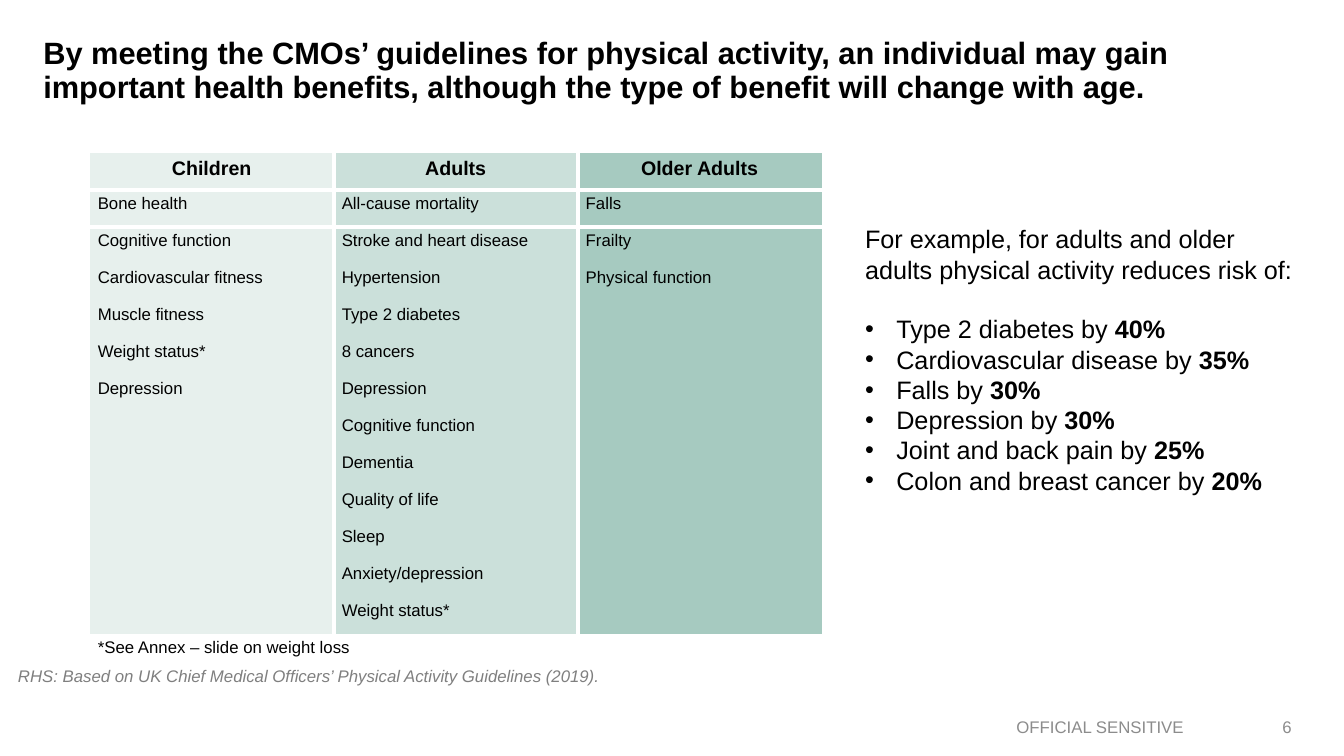
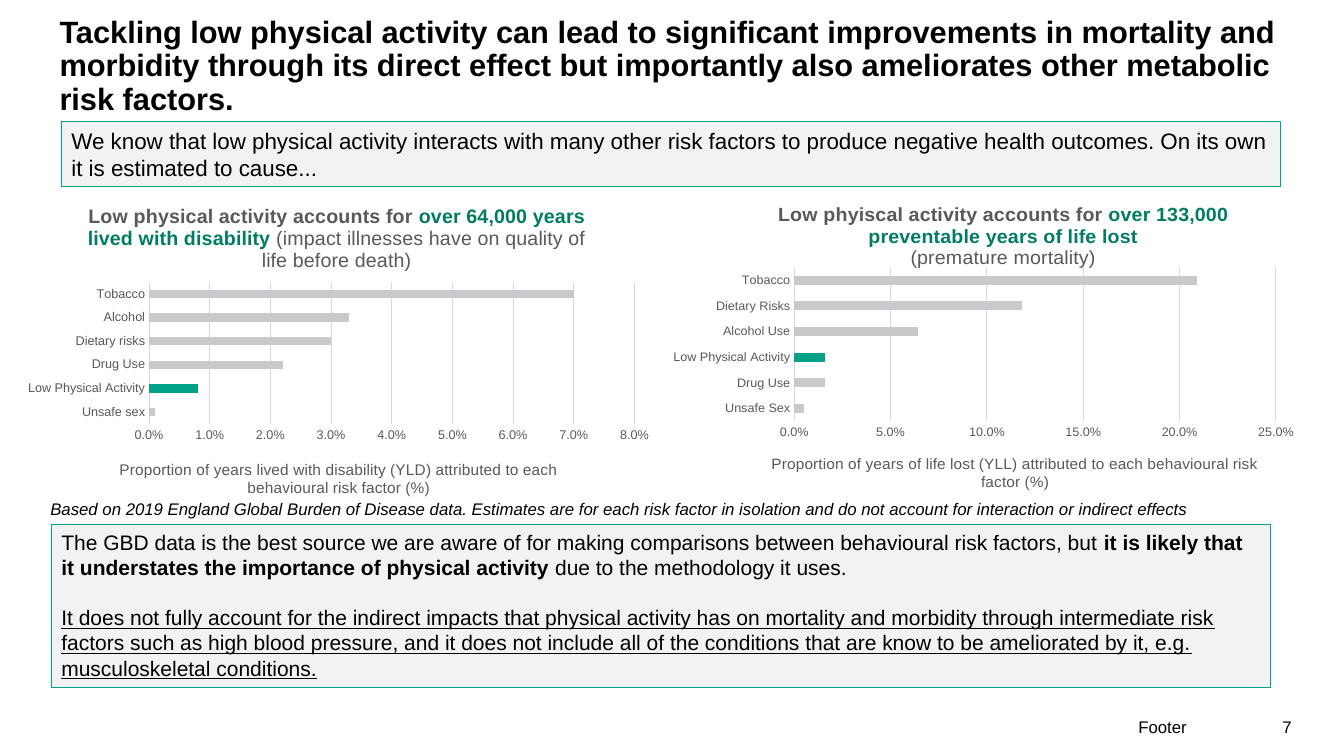
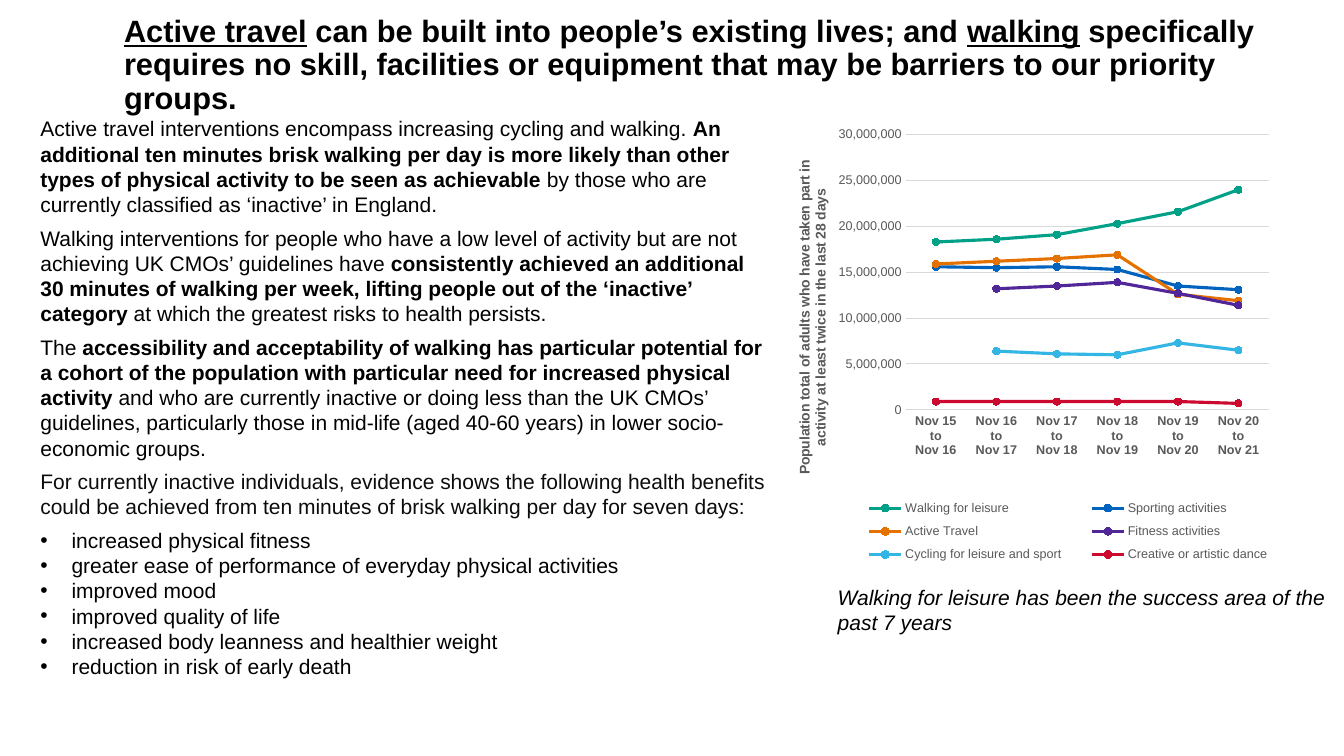
from lxml.etree import SubElement
from pptx import Presentation
from pptx.chart.data import CategoryChartData
from pptx.dml.color import RGBColor
from pptx.enum.chart import XL_CHART_TYPE, XL_LEGEND_POSITION, XL_MARKER_STYLE, XL_TICK_MARK
from pptx.enum.shapes import MSO_SHAPE
from pptx.enum.text import MSO_ANCHOR, MSO_AUTO_SIZE, PP_ALIGN
from pptx.oxml import parse_xml
from pptx.oxml.ns import nsdecls, qn
from pptx.util import Inches, Pt

HUES = {
    "ink": "000000", "soft": "0B0C0C", "white": "FFFFFF", "mute": "8C8C8C",
    "note": "7F7F7F", "label": "595959", "grid": "D9D9D9", "panel": "F2F2F2",
    "bar": "C9C9CB", "green": "01A188", "deep": "007C63", "blue": "0063BE",
    "orange": "E57200", "purple": "512698", "sky": "34B6E4", "red": "CC092F",
    "pale": "E7F0ED", "mint": "CBE0DA", "sage": "A6CAC0",
}
FONT = "Arial"
BOLD, LINE, PLAIN = {"bold": True}, {"underline": True}, {"bold": False}
DEEP = {"color": "deep"}

# Content

GAINS_HEAD = ("By meeting the CMOs’ guidelines for physical activity, an individual may gain "
              "important health benefits, although the type of benefit will change with age.")
GAINS = [
    ("Children", "pale", ["Bone health", "Cognitive function", "Cardiovascular fitness",
                          "Muscle fitness", "Weight status*", "Depression"]),
    ("Adults", "mint", ["All-cause mortality", "Stroke and heart disease", "Hypertension",
                        "Type 2 diabetes", "8 cancers", "Depression", "Cognitive function",
                        "Dementia", "Quality of life", "Sleep", "Anxiety/depression",
                        "Weight status*"]),
    ("Older Adults", "sage", ["Falls", "Frailty", "Physical function"]),
]
ANNEX = "*See Annex – slide on weight loss"
BASIS = "RHS: Based on UK Chief Medical Officers’ Physical Activity Guidelines (2019)."
RISK_LEAD = "For example, for adults and older adults physical activity reduces risk of:"
RISKS = [("Type 2 diabetes", 40), ("Cardiovascular disease", 35), ("Falls", 30),
         ("Depression", 30), ("Joint and back pain", 25), ("Colon and breast cancer", 20)]

BURDEN_HEAD = ("Tackling low physical activity can lead to significant improvements in mortality "
               "and morbidity through its direct effect but importantly also ameliorates other "
               "metabolic risk factors.")
BURDEN_LEAD = ("We know that low physical activity interacts with many other risk factors to "
               "produce negative health outcomes. On its own it is estimated to cause...")
BURDEN_NOTE = ("Based on 2019 England Global Burden of Disease data. Estimates are for each risk "
               "factor in isolation and do not account for interaction or indirect effects")
CAVEAT = [
    "The GBD data is the best source we are aware of for making comparisons between "
    "behavioural risk factors, but ",
    ("it is likely that it understates the importance of physical activity", BOLD),
    " due to the methodology it uses.",
]
LIMITS = ("It does not fully account for the indirect impacts that physical activity has on "
          "mortality and morbidity through intermediate risk factors such as high blood pressure, "
          "and it does not include all of the conditions that are know to be ameliorated by it, "
          "e.g. musculoskeletal conditions.")
FOCUS = "Low Physical Activity"
BURDENS = [
    {"at": (0.13, 1.87, 6.42, 3.2), "plot": (0.21, 0.29, 0.75, 0.44),
     "title": [["Low physical activity accounts for ",
                ("over 64,000 years lived with disability", DEEP),
                (" (impact illnesses have on quality of life before death)", PLAIN)]],
     "spot": None, "top": 0.08, "step": 0.01,
     "axis": "Proportion of years lived with disability (YLD) attributed to each "
             "behavioural risk factor (%)",
     "foot": (0.16, 0.83),
     "data": {"Unsafe sex": 0.001, FOCUS: 0.008, "Drug Use": 0.022,
              "Dietary risks": 0.03, "Alcohol": 0.033, "Tobacco": 0.07}},
    {"at": (6.54, 1.89, 6.37, 3.02), "plot": (0.21, 0.26, 0.75, 0.52),
     "title": [["Low phyiscal activity accounts for ",
                ("over 133,000 preventable years of life lost", DEEP)],
               [("(premature mortality)", PLAIN)]],
     "spot": (0.18, 0.03), "top": 0.25, "step": 0.05,
     "axis": "Proportion of years of life lost (YLL) attributed to each "
             "behavioural risk factor (%)",
     "foot": (0.17, 0.88),
     "data": {"Unsafe Sex": 0.005, "Drug Use": 0.016, FOCUS: 0.016,
              "Alcohol Use": 0.064, "Dietary Risks": 0.118, "Tobacco": 0.209}},
]

WALK_HEAD = [("Active travel", LINE), " can be built into people’s existing lives; and ",
             ("walking", LINE), " specifically requires no skill, facilities or equipment that "
             "may be barriers to our priority groups."]
WALK = [
    ["Active travel interventions encompass increasing cycling and walking. ",
     ("An additional ten minutes brisk walking per day is more likely than other types of "
      "physical activity to be seen as achievable", BOLD),
     " by those who are currently classified as ‘inactive’ in England."],
    ["Walking interventions for people who have a low level of activity but are not achieving "
     "UK CMOs’ guidelines have ",
     ("consistently achieved an additional 30 minutes of walking per week, lifting people out "
      "of the ‘inactive’ category", BOLD),
     " at which the greatest risks to health persists."],
    ["The ",
     ("accessibility and acceptability of walking has particular potential for a cohort of the "
      "population with particular need for increased physical activity ", BOLD),
     "and who are currently inactive or doing less than the UK CMOs’ guidelines, particularly "
     "those in mid-life (aged 40-60 years) in lower socio-economic groups."],
    [("For currently inactive individuals, evidence shows the following health benefits could be "
      "achieved from ten minutes of brisk walking per day for seven days:", {"color": "soft"})],
]
PERKS = ["increased physical fitness",
         "greater ease of performance of everyday physical activities",
         "improved mood", "improved quality of life",
         "increased body leanness and healthier weight", "reduction in risk of early death"]
TREND_AXIS = ("Population total of adults who have taken part in activity at least twice "
              "in the last 28 days")
TRENDS = [  # millions of adults
    ("Walking for leisure", "green", [18.3, 18.6, 19.1, 20.3, 21.6, 24]),
    ("Sporting activities", "blue", [15.6, 15.5, 15.6, 15.3, 13.5, 13.1]),
    ("Active Travel", "orange", [15.9, 16.2, 16.5, 16.9, 12.6, 11.9]),
    ("Fitness activities", "purple", [None, 13.2, 13.5, 13.9, 12.7, 11.4]),
    ("Cycling for leisure and sport", "sky", [None, 6.4, 6.1, 6, 7.3, 6.5]),
    ("Creative or artistic dance", "red", [0.9, 0.9, 0.9, 0.9, 0.9, 0.7]),
]
WALK_NOTE = "Walking for leisure has been the success area of the past 7 years"


# Helpers

def hue(name):
    return RGBColor.from_string(HUES[name])


def style(font, size, color="ink", **flags):
    font.name, font.size = FONT, Pt(size)
    font.color.rgb = hue(color)
    for flag, on in flags.items():
        setattr(font, flag, on)


def text(frame, paras, size=15, bullet=False, align=PP_ALIGN.LEFT, after=0, line=None, **look):
    """Append paragraphs; each is a string or a list of strings and (string, look) pairs."""
    for item in paras:
        para = frame.add_paragraph() if frame.text else frame.paragraphs[0]
        props = para._p.get_or_add_pPr()
        props.set("marL", str(Inches(0.31 if bullet else 0)))
        props.set("indent", str(Inches(-0.31 if bullet else 0)))
        if bullet:
            SubElement(props, qn("a:buFont")).set("typeface", FONT)
            SubElement(props, qn("a:buChar")).set("char", "•")
        else:
            SubElement(props, qn("a:buNone"))
        para.alignment, para.space_before, para.space_after = align, Pt(0), Pt(after)
        if line:
            para.line_spacing = line
        for part in [item] if isinstance(item, str) else item:
            words, extra = (part, {}) if isinstance(part, str) else part
            run = para.add_run()
            run.text = words
            style(run.font, size, **{**look, **extra})


def place(shape, at, anchor=MSO_ANCHOR.TOP):
    shape.left, shape.top, shape.width, shape.height = map(Inches, at)
    frame = shape.text_frame
    frame.word_wrap, frame.auto_size = True, MSO_AUTO_SIZE.NONE
    frame.vertical_anchor = anchor
    return frame


def box(slide, at, anchor=MSO_ANCHOR.TOP):
    return place(slide.shapes.add_textbox(*map(Inches, at)), at, anchor)


def panel(slide, at):
    shape = slide.shapes.add_shape(MSO_SHAPE.RECTANGLE, *map(Inches, at))
    shape.shadow.inherit = False
    shape.fill.solid()
    shape.fill.fore_color.rgb = hue("panel")
    shape.line.color.rgb, shape.line.width = hue("green"), Pt(0.75)
    return place(shape, at)


def start(deck, layout, at, head, anchor=MSO_ANCHOR.TOP):
    slide = deck.slides.add_slide(deck.slide_layouts[layout])
    text(place(slide.shapes.title, at, anchor), [head], size=22, line=0.9, bold=True)
    return slide


def footer(slide, label, number, left, color):
    for words, at in ((label, (left, 6.95, 6.98, 0.4)), (number, (12.08, 6.95, 0.83, 0.4))):
        frame = box(slide, at, MSO_ANCHOR.BOTTOM)
        frame.margin_top = frame.margin_bottom = Inches(0.04)
        text(frame, [words], size=12, align=PP_ALIGN.RIGHT, color=color)


def layout(part, index, spot, inner=False):
    """Set a manual layout (x, y and maybe w, h as fractions) on a chart part."""
    for old in part.findall(qn("c:layout")):
        part.remove(old)
    target = '<c:layoutTarget val="inner"/>' if inner else ""
    modes = '<c:xMode val="edge"/><c:yMode val="edge"/>'
    sizes = "".join(f'<c:{key} val="{val}"/>' for key, val in zip("xywh", spot))
    part.insert(index, parse_xml(
        f'<c:layout {nsdecls("c")}><c:manualLayout>{target}{modes}{sizes}'
        '</c:manualLayout></c:layout>'))


def caption(title, paras, size, spot, **look):
    text(title.text_frame, paras, size=size, align=PP_ALIGN.CENTER, color="label", **look)
    if spot:
        layout(title._element, 1, spot)


def chart(slide, kind, at, data, plot, top, step, form):
    made = slide.shapes.add_chart(kind, *map(Inches, at), data).chart
    style(made.font, 10)
    made.has_legend = made.has_title = False
    cats, vals = made.category_axis, made.value_axis
    for axis in (cats, vals):
        axis.major_tick_mark = axis.minor_tick_mark = XL_TICK_MARK.NONE
        style(axis.tick_labels.font, 9, "label")
    cats.has_major_gridlines = False
    vals.has_major_gridlines = True
    for rule in (cats.format.line, vals.major_gridlines.format.line):
        rule.color.rgb, rule.width = hue("grid"), Pt(0.75)
    vals.format.line.fill.background()
    vals.minimum_scale, vals.maximum_scale, vals.major_unit = 0, top, step
    vals.tick_labels.number_format = form
    vals.tick_labels.number_format_is_linked = False
    layout(made._chartSpace.find(".//" + qn("c:plotArea")), 0, plot, inner=True)
    return made


def bars(slide, info):
    data = CategoryChartData()
    data.categories = list(info["data"])
    data.add_series("Series 1", info["data"].values())
    made = chart(slide, XL_CHART_TYPE.BAR_CLUSTERED, info["at"], data, info["plot"],
                 info["top"], info["step"], "0.0%")
    made.has_title = True
    caption(made.chart_title, info["title"], 14, info["spot"], bold=True)
    caption(made.value_axis.axis_title, [info["axis"]], 11, info["foot"], bold=False)
    plot = made.plots[0]
    plot.gap_width, plot.vary_by_categories = 182, False
    series = plot.series[0]
    focus = series.points[list(info["data"]).index(FOCUS)]
    for part, name in ((series, "bar"), (focus, "green")):
        part.format.fill.solid()
        part.format.fill.fore_color.rgb = hue(name)


def lines(slide):
    data = CategoryChartData()
    data.categories = [f"Nov {year}\nto\nNov {year + 1}" for year in range(15, 21)]
    for name, _, vals in TRENDS:
        data.add_series(name, [val and round(val * 1_000_000) for val in vals])
    made = chart(slide, XL_CHART_TYPE.LINE_MARKERS, (7.74, 1.2, 6.21, 4.55), data,
                 (0.2, 0.03, 0.58, 0.6), 30_000_000, 5_000_000, "#,##0")
    made.category_axis.tick_labels.font.bold = True
    caption(made.value_axis.axis_title, [TREND_AXIS], 10, (0.02, 0.08), bold=True)
    made.plots[0].vary_by_categories = False
    for series, (_, name, _) in zip(made.plots[0].series, TRENDS):
        series.smooth = False
        series.format.line.color.rgb, series.format.line.width = hue(name), Pt(2.25)
        mark = series.marker
        mark.style, mark.size = XL_MARKER_STYLE.CIRCLE, 5
        mark.format.fill.solid()
        mark.format.fill.fore_color.rgb = mark.format.line.color.rgb = hue(name)
    made.has_legend = True
    made.legend.position = XL_LEGEND_POSITION.RIGHT
    made.legend.include_in_layout = False
    style(made.legend.font, 9, "label")
    layout(made.legend._element, 1, (0.1, 0.81, 0.72, 0.17))


def edges(cell, sides):
    """Draw white rules on the given sides, listed in the order L, R, T, B."""
    for side in sides:
        cell._tc.get_or_add_tcPr().append(parse_xml(
            f'<a:ln{side} {nsdecls("a")} w="{Pt(3)}"><a:solidFill>'
            f'<a:srgbClr val="{HUES["white"]}"/></a:solidFill></a:ln{side}>'))


def fill_cell(cell, words, **look):
    cell.margin_left = cell.margin_right = Inches(0.08)
    cell.margin_top = cell.margin_bottom = Inches(0.04)
    text(cell.text_frame, [words], **look)


def grid(slide):
    last = max(len(items) for _, _, items in GAINS) + 1
    table = slide.shapes.add_table(last + 1, len(GAINS), Inches(0.89), Inches(1.52),
                                   Inches(7.26), Inches(5.14)).table
    table.first_row = table.horz_banding = False
    plain = "{2D5ABB26-0587-4C30-8999-92F81FD0307C}"
    table._tbl.tblPr.find(qn("a:tableStyleId")).text = plain
    for col, (head, tint, items) in enumerate(GAINS):
        words = [head] + items + [""] * (last - 1 - len(items))
        for row, word in enumerate(words):
            cell = table.cell(row, col)
            look = {"size": 12}
            if row == 0:
                look = {"size": 14, "bold": True, "align": PP_ALIGN.CENTER}
            fill_cell(cell, word, **look)
            edges(cell, ("L" if col else "") + ("R" if col < len(GAINS) - 1 else "")
                  + {0: "B", 1: "T"}.get(row, ""))
            cell.fill.solid()
            cell.fill.fore_color.rgb = hue(tint)
    foot = table.cell(last, 0)
    foot.merge(table.cell(last, len(GAINS) - 1))
    fill_cell(foot, ANNEX, size=12)
    foot.fill.background()


# Slides

def gains(deck):
    slide = start(deck, 1, (0.33, 0.33, 12.52, 0.92), GAINS_HEAD)
    footer(slide, "OFFICIAL SENSITIVE", "6", 4.86, "mute")
    text(box(slide, (0.08, 6.56, 12.76, 0.3)), [BASIS], size=12, color="note", italic=True)
    grid(slide)
    body = place(slide.placeholders[1], (8.48, 2.17, 4.47, 2.83))
    text(body, [RISK_LEAD], size=18, after=21)
    text(body, [[f"{name} by ", (f"{cut}%", BOLD)] for name, cut in RISKS], size=18, bullet=True)


def burden(deck):
    slide = start(deck, 5, (0.49, 0.44, 12.33, 0.45), BURDEN_HEAD, MSO_ANCHOR.MIDDLE)
    footer(slide, "Footer", "7", 4.89, "ink")
    text(panel(slide, (0.61, 1.21, 12.09, 0.64)), [BURDEN_LEAD], size=16)
    text(box(slide, (0.4, 4.9, 13.22, 0.3)), [BURDEN_NOTE], size=12, italic=True)
    for info in BURDENS:
        bars(slide, info)
    frame = panel(slide, (0.51, 5.2, 12.09, 1.62))
    text(frame, [CAVEAT], after=18)
    text(frame, [LIMITS], underline=True)


def walking(deck):
    slide = start(deck, 1, (1.13, 0.11, 11.71, 1.1), WALK_HEAD)
    body = place(slide.placeholders[1], (0.3, 1.1, 7.44, 5.74))
    text(body, WALK, after=6)
    text(body, PERKS, bullet=True)
    lines(slide)
    text(box(slide, (8.21, 5.75, 5.12, 0.61)), [WALK_NOTE], italic=True)


def main():
    deck = Presentation()
    deck.slide_width, deck.slide_height = Inches(13.33), Inches(7.5)
    for make in (gains, burden, walking):
        make(deck)
    deck.save("out.pptx")


if __name__ == "__main__":
    main()
